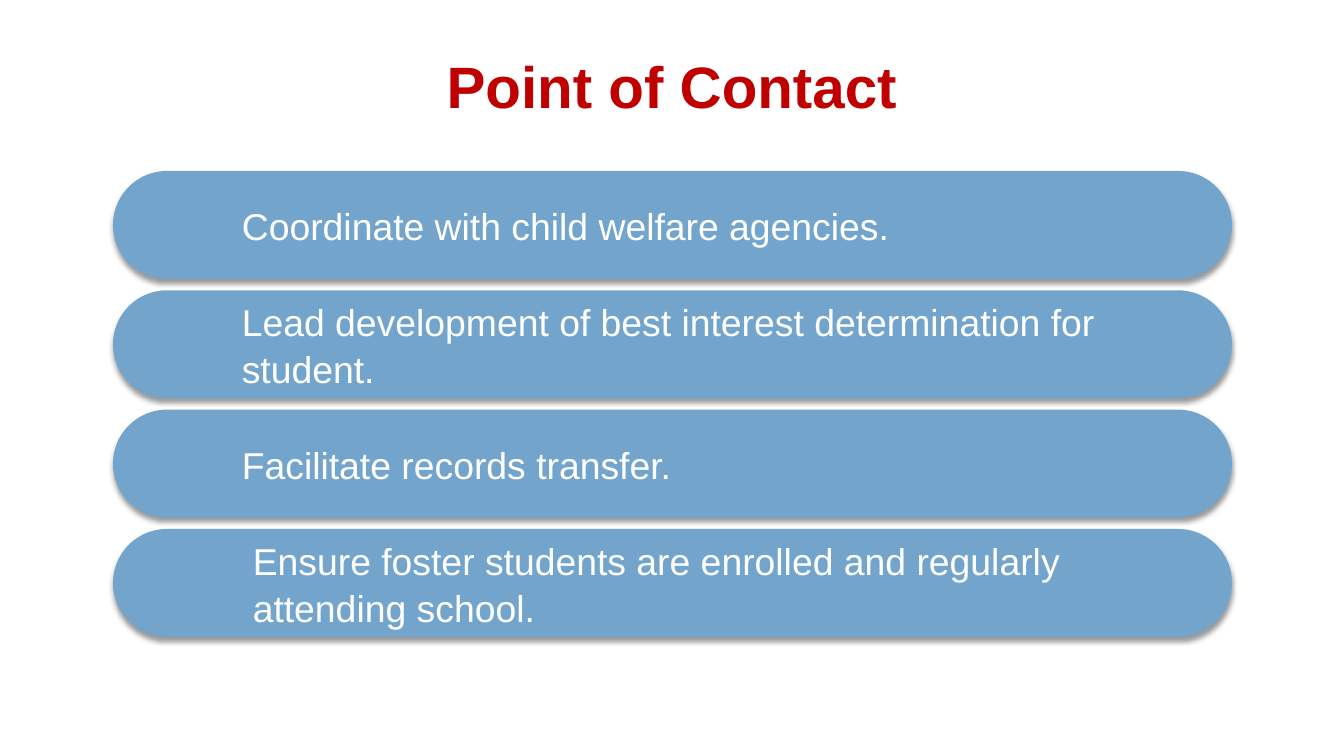
from lxml import etree
from pptx import Presentation
from pptx.dml.color import RGBColor
from pptx.enum.shapes import MSO_SHAPE
from pptx.enum.text import MSO_ANCHOR, MSO_AUTO_SIZE, PP_ALIGN
from pptx.oxml.ns import qn
from pptx.util import Emu, Pt

PX = 914400 // 84
ROUNDED = MSO_SHAPE.ROUNDED_RECTANGLE
MIDDLE = MSO_ANCHOR.MIDDLE
LEFT, CENTER = PP_ALIGN.LEFT, PP_ALIGN.CENTER
TITLE_ONLY = 5

RED, BLUE, WHITE, BLACK = "C00000", "73A5CC", "FFFFFF", "000000"
DUTIES = [
    ("Coordinate with child welfare agencies.", 105),
    ("Lead development of best interest determination for student.", 105),
    ("Facilitate records transfer.", 105),
    ("Ensure foster students are enrolled and regularly attending school.", 116),
]


def px(length):
    return Emu(round(length * PX))


def color(hex_value):
    return RGBColor.from_string(hex_value)


def write(shape, text, size, fill, bold=False, align=LEFT, indent=0,
          inset=(8, 4), spacing=1.0):
    frame = shape.text_frame
    frame.word_wrap = True
    frame.auto_size = MSO_AUTO_SIZE.NONE
    frame.vertical_anchor = MIDDLE
    frame.margin_left = frame.margin_right = px(inset[0])
    frame.margin_top = frame.margin_bottom = px(inset[1])
    frame.text = text
    paragraph = frame.paragraphs[0]
    paragraph.alignment = align
    paragraph.line_spacing = spacing
    paragraph.space_before = Pt(0)
    properties = paragraph._p.get_or_add_pPr()
    properties.set("marL", str(px(indent)))
    properties.set("indent", "0")
    font = paragraph.runs[0].font
    font.name, font.size, font.bold = "Arial", Pt(size), bold
    font.color.rgb = color(fill)


def cast_shadow(shape, blur, distance, opacity):
    shape.shadow.inherit = False
    effects = shape._element.spPr.find(qn("a:effectLst"))
    shadow = etree.SubElement(
        effects, qn("a:outerShdw"), blurRad=str(Pt(blur)),
        dist=str(Pt(distance)), dir="5400000", rotWithShape="0")
    tint = etree.SubElement(shadow, qn("a:srgbClr"), val=BLACK)
    etree.SubElement(tint, qn("a:alpha"), val=str(opacity * 1000))


def place_title(slide, text, left, top, width, height):
    title = slide.shapes.title
    title.left, title.top = px(left), px(top)
    title.width, title.height = px(width), px(height)
    write(title, text, 50, RED, bold=True, align=CENTER, inset=(0, 0))


def place_duties(slide, duties, left, top, width, height):
    bar_height = 108
    pitch = (height - bar_height) / (len(duties) - 1)
    for row, (duty, indent) in enumerate(duties):
        bar = slide.shapes.add_shape(
            ROUNDED, px(left), px(top + row * pitch), px(width), px(bar_height))
        bar.adjustments[0] = 0.5
        bar.fill.solid()
        bar.fill.fore_color.rgb = color(BLUE)
        bar.line.fill.background()
        cast_shadow(bar, blur=4, distance=3, opacity=40)
        write(bar, duty, 32, WHITE, indent=indent, spacing=1.05)


def main():
    deck = Presentation()
    deck.slide_width, deck.slide_height = px(1344), px(756)
    slide = deck.slides.add_slide(deck.slide_layouts[TITLE_ONLY])
    place_title(slide, "Point of Contact", 67, 50, 1210, 71)
    place_duties(slide, DUTIES, 113, 171, 1119, 466)
    deck.save("out.pptx")


if __name__ == "__main__":
    main()
